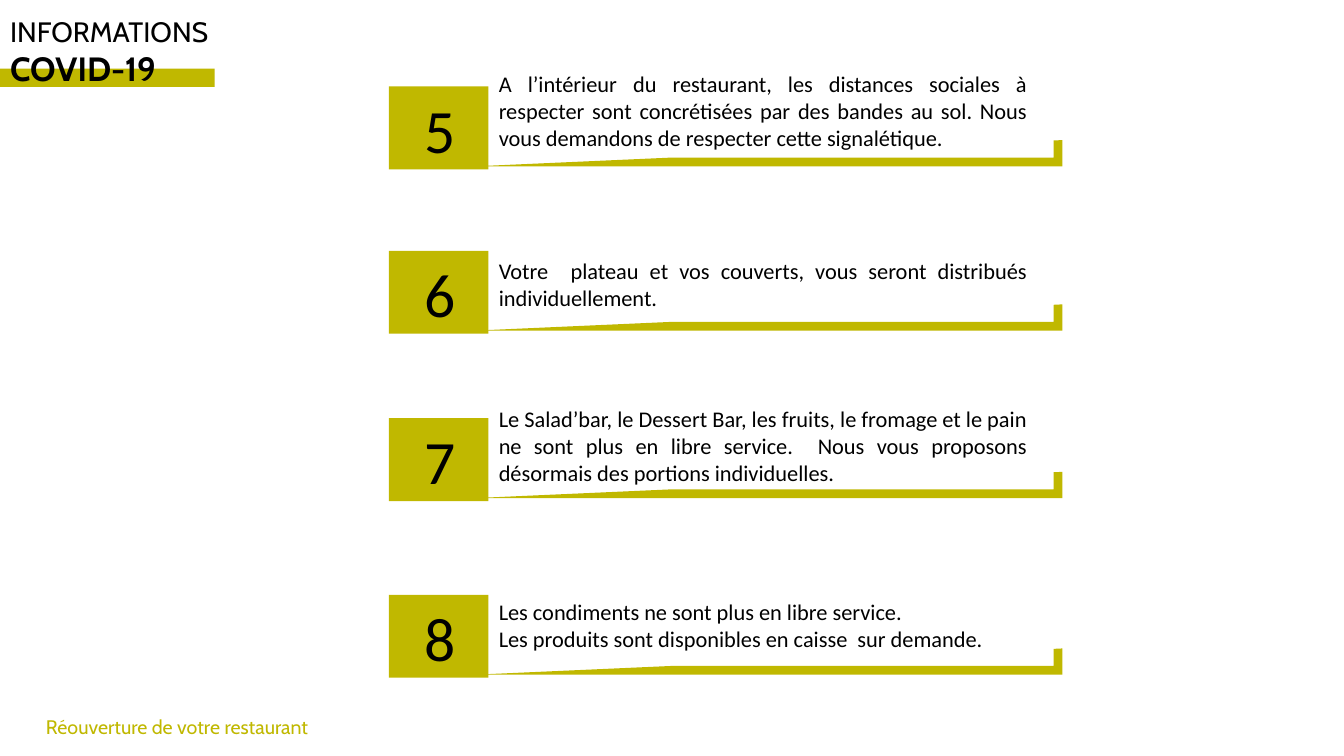
from pptx import Presentation
from pptx.dml.color import RGBColor
from pptx.enum.shapes import MSO_SHAPE
from pptx.enum.text import MSO_ANCHOR, MSO_AUTO_SIZE, PP_ALIGN
from pptx.util import Cm, Pt

OLIVE = RGBColor(0xC0, 0xB8, 0x00)
BLACK = RGBColor(0x00, 0x00, 0x00)

RULE_LEFT = Cm(9.8)
# Top of each number square, shift of its text from that top, height, lines
RULES = [
    (Cm(2.18), Cm(-0.53), Cm(2.31),
     ["A l’intérieur du restaurant, les distances sociales à respecter sont "
      "concrétisées par des bandes au sol. Nous vous demandons de respecter "
      "cette signalétique."]),
    (Cm(6.32), Cm(0.03), Cm(1.63),
     ["Votre  plateau et vos couverts, vous seront distribués "
      "individuellement."]),
    (Cm(10.54), Cm(-0.46), Cm(2.31),
     ["Le Salad’bar, le Dessert Bar, les fruits, le fromage et le pain ne sont "
      "plus en libre service.  Nous vous proposons désormais des portions "
      "individuelles."]),
    (Cm(14.99), Cm(-0.05), Cm(1.63),
     ["Les condiments ne sont plus en libre service.",
      "Les produits sont disponibles en caisse  sur demande."]),
]
FIRST_NUMBER = 5


def add_olive_shape(page, kind, left, top, width, height):
    shape = page.shapes.add_shape(kind, left, top, width, height)
    shape.shadow.inherit = False
    shape.fill.solid()
    shape.fill.fore_color.rgb = OLIVE
    shape.line.fill.background()
    return shape


def write_lines(box, lines, size, font="Calibri", color=BLACK,
                align=PP_ALIGN.LEFT):
    frame = box.text_frame
    frame.word_wrap = True
    frame.auto_size = MSO_AUTO_SIZE.NONE
    frame.vertical_anchor = MSO_ANCHOR.TOP
    frame.text = "\n".join(lines)
    for para in frame.paragraphs:
        para.alignment = align
        para.font.name = font
        para.font.size = Pt(size)
        para.font.color.rgb = color


def add_heading(page, left, top, width, height):
    # Olive band behind the second line of the title
    band = add_olive_shape(page, MSO_SHAPE.RECTANGLE, left, top + Cm(1.5),
                           Cm(5.41), Cm(0.46))
    title = page.shapes.title
    title.left, title.top, title.width, title.height = left, top, width, height
    write_lines(title, ["INFORMATIONS", "COVID-19"], 20, "Cabin")
    topic = title.text_frame.paragraphs[1]
    topic.font.size = Pt(24)
    topic.font.bold = True
    # Bring the title in front of its band
    band.element.addnext(title.element)


def add_footer(page, left, top, width, height):
    box = page.shapes.add_textbox(left, top, width, height)
    write_lines(box, ["Réouverture de votre restaurant"], 14, "Cabin", OLIVE)


def add_rule(page, left, top, number, text_shift, text_height, lines):
    # Number square
    add_olive_shape(page, MSO_SHAPE.RECTANGLE, left, top, Cm(2.51), Cm(2.09))
    # Rule text
    box = page.shapes.add_textbox(left + Cm(2.52), top + text_shift,
                                  Cm(13.82), text_height)
    write_lines(box, lines, 16, align=PP_ALIGN.JUSTIFY)
    # Number
    box = page.shapes.add_textbox(left + Cm(0.64), top, Cm(1.22), Cm(2.13))
    write_lines(box, [str(number)], 44)
    # Half frame underlining the text
    underline = add_olive_shape(page, MSO_SHAPE.HALF_FRAME, left + Cm(2.19),
                                top + Cm(1.35), Cm(14.78), Cm(0.66))
    underline.rotation = 180


def main():
    deck = Presentation()
    deck.slide_width, deck.slide_height = Cm(33.87), Cm(19.05)
    page = deck.slides.add_slide(deck.slide_layouts[5])
    add_heading(page, Cm(0), Cm(0.23), Cm(7.14), Cm(2.13))
    add_footer(page, Cm(0.91), Cm(17.88), Cm(8.99), Cm(0.86))
    for number, (top, shift, height, lines) in enumerate(RULES, FIRST_NUMBER):
        add_rule(page, RULE_LEFT, top, number, shift, height, lines)
    deck.save("out.pptx")


if __name__ == "__main__":
    main()
